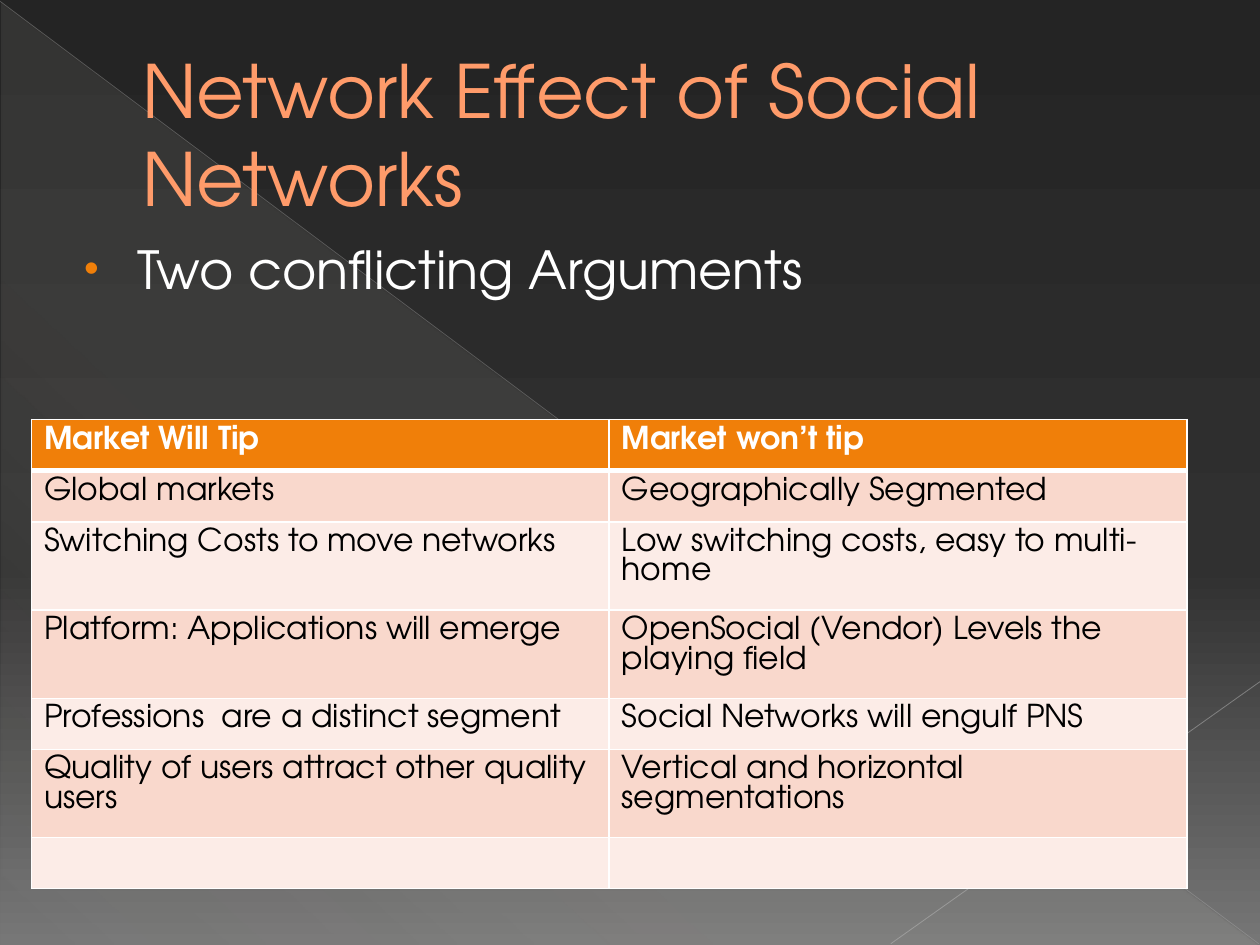
from dataclasses import dataclass

from lxml.etree import SubElement
from pptx import Presentation
from pptx.dml.color import RGBColor
from pptx.enum.shapes import MSO_CONNECTOR, MSO_SHAPE
from pptx.enum.text import MSO_ANCHOR
from pptx.oxml import parse_xml
from pptx.oxml.ns import nsdecls, qn
from pptx.util import Inches, Pt


@dataclass(frozen=True)
class Theme:
    """Colours, font and type sizes of the slide."""
    font: str = "TeX Gyre Adventor"
    title_size: float = 42
    body_size: float = 30
    table_size: float = 18
    title: str = "FF9B6A"
    title_outline: str = "A65806"
    accent: str = "F07F09"
    white: str = "FFFFFF"
    black: str = "000000"
    bands: tuple = ("F9D8CC", "FCECE7")
    background: tuple = ((0, "242424", 100), (60, "303030", 100), (100, "767676", 100))
    sheen: tuple = ((0, "E3DED1", 10), (70, "E3DED1", 8), (100, "E3DED1", 1))
    falling_line: str = "B6B6B6"
    rising_line: str = "BFBFBF"


THEME = Theme()

ARGUMENTS = [
    ("Market Will Tip", "Market won’t tip"),
    ("Global markets", "Geographically Segmented"),
    ("Switching Costs to move networks", "Low switching costs, easy to multi-home"),
    ("Platform: Applications will emerge", "OpenSocial (Vendor) Levels the playing field"),
    ("Professions  are a distinct segment", "Social Networks will engulf PNS"),
    ("Quality of users attract other quality users", "Vertical and horizontal segmentations"),
    ("", ""),
]


def set_gradient(fill, element, stops, angle):
    """Fill with linear gradient stops of (position, colour, opacity) in percent."""
    fill.gradient()
    gradient = element.find(".//" + qn("a:gradFill"))
    for child in list(gradient):
        gradient.remove(child)
    stop_list = SubElement(gradient, qn("a:gsLst"))
    for position, color, opacity in stops:
        stop = SubElement(stop_list, qn("a:gs"), pos=str(position * 1000))
        rgb = SubElement(stop, qn("a:srgbClr"), val=color)
        SubElement(rgb, qn("a:alpha"), val=str(opacity * 1000))
    SubElement(gradient, qn("a:lin"), ang=str(angle * 60000), scaled="0")


def write_text(frame, text, *, size, color, bold=False, margin=0, indent=0,
               space_before=None):
    """Write one formatted paragraph into a text frame and return it."""
    frame.word_wrap = True
    paragraph = frame.paragraphs[0]
    paragraph.space_before = space_before
    properties = paragraph._p.get_or_add_pPr()
    properties.set("marL", str(Inches(margin)))
    properties.set("indent", str(Inches(indent)))
    paragraph.font.size = Pt(size)
    if text:
        run = paragraph.add_run()
        run.text = text
        run.font.name = THEME.font
        run.font.size = Pt(size)
        run.font.bold = bold
        run.font.color.rgb = RGBColor.from_string(color)
    return paragraph


def add_thin_line(slide, start, end, color, width, opacity):
    """Draw a translucent straight line between two points in inches."""
    line = slide.shapes.add_connector(
        MSO_CONNECTOR.STRAIGHT, *(Inches(value) for value in (*start, *end)))
    line.line.width = Pt(width)
    line.line.color.rgb = RGBColor.from_string(color)
    rgb = line._element.find(".//" + qn("a:srgbClr"))
    SubElement(rgb, qn("a:alpha"), val=str(opacity * 1000))
    SubElement(line._element.spPr, qn("a:effectLst"))


def add_backdrop(slide, left, top, width, height):
    """Paint the dark background with its sheen and two crossing lines."""
    background = slide.background.fill
    set_gradient(background, slide.element, THEME.background, 90)
    triangle = slide.shapes.add_shape(
        MSO_SHAPE.RIGHT_TRIANGLE, Inches(left + 0.01), Inches(top + 0.02),
        Inches(width - 0.02), Inches(height - 0.02))
    triangle.shadow.inherit = False
    triangle.line.fill.background()
    set_gradient(triangle.fill, triangle.element, THEME.sheen, 133)
    right, bottom = left + width, top + height - 0.01
    add_thin_line(slide, (left, top + 0.01), (right - 0.01, bottom),
                  THEME.falling_line, 0.39, 35)
    add_thin_line(slide, (right, top + 5.41), (left + 7.07, bottom),
                  THEME.rising_line, 0.47, 45)


def add_title(slide, left, top, width, height):
    """Place the outlined slide title, centred vertically in its box."""
    box = slide.shapes.add_textbox(*map(Inches, (left, top, width, height)))
    box.text_frame.vertical_anchor = MSO_ANCHOR.MIDDLE
    paragraph = write_text(box.text_frame, "Network Effect of Social Networks",
                           size=THEME.title_size, color=THEME.title, margin=0.53)
    outline = parse_xml(
        f'<a:ln {nsdecls("a")} w="{Pt(0.5)}"><a:solidFill>'
        f'<a:srgbClr val="{THEME.title_outline}"/></a:solidFill></a:ln>')
    paragraph.runs[0].font._element.insert(0, outline)


def add_body(slide, left, top, width, height):
    """Place the bulleted lead-in line."""
    box = slide.shapes.add_textbox(*map(Inches, (left, top, width, height)))
    paragraph = write_text(box.text_frame, "Two conflicting Arguments",
                           size=THEME.body_size, color=THEME.white,
                           margin=0.49, indent=-0.42,
                           space_before=Pt(THEME.body_size * 0.2))
    bullet = parse_xml(
        f'<a:pPr {nsdecls("a")}><a:buClr><a:srgbClr val="{THEME.accent}"/></a:buClr>'
        '<a:buSzPct val="80000"/><a:buFont typeface="Arial"/><a:buChar char="•"/></a:pPr>')
    spacing = paragraph._p.pPr.find(qn("a:spcBef"))
    for part in reversed(list(bullet)):
        spacing.addnext(part)


def set_borders(cell, **widths):
    """Draw white cell borders with widths in points, keyed by side L, R, T, B."""
    properties = cell._tc.get_or_add_tcPr()
    for side, width in widths.items():
        properties.append(parse_xml(
            f'<a:ln{side} {nsdecls("a")} w="{Pt(width)}"><a:solidFill>'
            f'<a:srgbClr val="{THEME.white}"/></a:solidFill></a:ln{side}>'))


def add_arguments_table(slide, left, top, width, height):
    """Place the two-column table of opposing arguments."""
    row_count, column_count = len(ARGUMENTS), len(ARGUMENTS[0])
    table = slide.shapes.add_table(
        row_count, column_count, *map(Inches, (left, top, width, height))).table
    for row, texts in enumerate(ARGUMENTS):
        header = row == 0
        fill = THEME.accent if header else THEME.bands[(row - 1) % 2]
        for column, text in enumerate(texts):
            cell = table.cell(row, column)
            set_borders(cell, L=1, R=1, T=3 if row == 1 else 1, B=3 if header else 1)
            cell.fill.solid()
            cell.fill.fore_color.rgb = RGBColor.from_string(fill)
            write_text(cell.text_frame, text, size=THEME.table_size, bold=header,
                       color=THEME.white if header else THEME.black)


def main():
    """Build the slide and save the presentation."""
    presentation = Presentation()
    presentation.slide_width = Inches(10)
    presentation.slide_height = Inches(7.5)
    slide = presentation.slides.add_slide(presentation.slide_layouts[6])
    add_backdrop(slide, 0, 0, 10, 7.5)
    add_title(slide, 0.5, 0.29, 9, 1.53)
    add_body(slide, 0.5, 1.83, 9, 5)
    add_arguments_table(slide, 0.25, 3.33, 9.17, 2.84)
    presentation.save("out.pptx")


if __name__ == "__main__":
    main()
